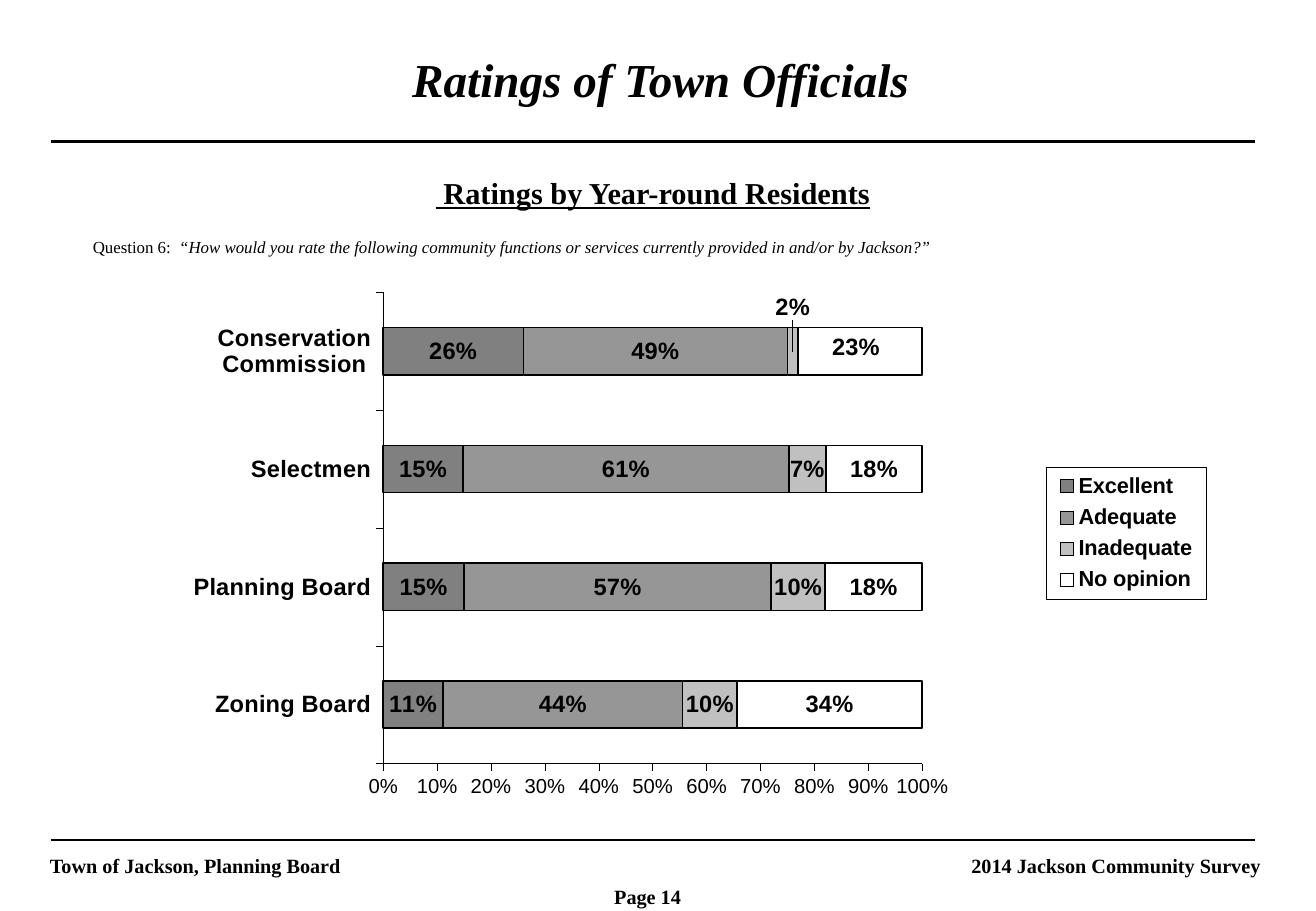
from lxml import etree
from pptx import Presentation
from pptx import util as u
from pptx.chart.data import CategoryChartData
from pptx.dml.color import RGBColor
from pptx.enum import chart as ch, shapes, text
from pptx.oxml.ns import qn

# Theme
THEME = dict(ink="000000", serif="Times New Roman", sans="Arial",
             title=28, subtitle=18, question=10, footer=12,
             label=14, axis=12, legend=12.9,
             fills=["808080", "969696", "C0C0C0", "FFFFFF"])
INK = RGBColor.from_string(THEME["ink"])

# Slide on a grid of 130 columns by 90 rows, 12 to the inch
prs = Presentation()
CELL = u.Inches(1) // 12
prs.slide_width, prs.slide_height = 130 * CELL, 90 * CELL
s = prs.slides.add_slide(prs.slide_layouts[5])


def grid(*cells):
    return [u.Emu(round(c * CELL)) for c in cells]


def style(font, size, name=THEME["serif"], **fmt):
    for key, value in dict(size=u.Pt(size), name=name, **fmt).items():
        setattr(font, key, value)
    font.color.rgb = INK


# Title, subtitle, question and footer
LEFT, CENTER, RIGHT = text.PP_ALIGN.LEFT, text.PP_ALIGN.CENTER, text.PP_ALIGN.RIGHT
bold = dict(bold=True)
texts = [
    ((5.75, 5, 119, 6.25), CENTER, THEME["title"],
     [("Ratings of Town Officials", dict(bold=True, italic=True))]),
    ((5, 17, 119, 4.4), CENTER, THEME["subtitle"],
     [(" Ratings by Year-round Residents", dict(bold=True, underline=True))]),
    ((8, 23, 109, 3), LEFT, THEME["question"],
     [("Question 6:", {}),
      ("  “How would you rate the following community functions or services "
       "currently provided in and/or by Jackson?”", dict(italic=True))]),
    ((3.75, 84, 47, 3.33), LEFT, THEME["footer"], [("Town of Jackson, Planning Board", bold)]),
    ((81.75, 84, 44, 3.33), RIGHT, THEME["footer"], [("2014 Jackson Community Survey", bold)]),
    ((59.5, 87, 11, 3.33), LEFT, THEME["footer"], [("Page 14", bold)]),
]
for i, (box, align, size, runs) in enumerate(texts):
    sp = s.shapes.title if i == 0 else s.shapes.add_textbox(*grid(*box))
    sp.left, sp.top, sp.width, sp.height = grid(*box)
    tf = sp.text_frame
    tf.word_wrap, tf.auto_size = True, text.MSO_AUTO_SIZE.NONE
    tf.vertical_anchor = text.MSO_ANCHOR.TOP
    p = tf.paragraphs[0]
    p.alignment, p.line_spacing = align, 0.9
    for words, fmt in runs:
        r = p.add_run()
        r.text = words
        style(r.font, size, **fmt)

# Rules under the title and above the footer
for row, weight in [(14, 2), (83, 1)]:
    line = s.shapes.add_connector(shapes.MSO_CONNECTOR.STRAIGHT, *grid(5, row, 124, row))
    line.line.color.rgb, line.line.width = INK, u.Pt(weight)
    etree.SubElement(line._element.spPr, qn("a:effectLst"))

# Ratings chart
data = CategoryChartData(number_format="0%")
data.categories = ["Zoning Board", "Planning Board", "Selectmen", "Conservation Commission"]
for name, values in [("Excellent", (0.11, 0.15, 0.15, 0.26)),
                     ("Adequate", (0.44, 0.57, 0.61, 0.49)),
                     ("Inadequate", (0.10, 0.10, 0.07, 0.02)),
                     ("No opinion", (0.34, 0.18, 0.18, 0.23))]:
    data.add_series(name, values)
chart = s.shapes.add_chart(ch.XL_CHART_TYPE.BAR_STACKED_100,
                           *grid(16.7, 27.25, 103.2, 54.1), data).chart
style(chart.font, 17.3, THEME["sans"], bold=True)
chart.has_title = False
plot = chart.plots[0]
plot.gap_width, plot.overlap, plot.vary_by_categories = 150, 100, False

# Axes
for axis, size, is_bold in [(chart.category_axis, THEME["label"], True),
                            (chart.value_axis, THEME["axis"], False)]:
    axis.has_major_gridlines = False
    axis.major_tick_mark, axis.minor_tick_mark = ch.XL_TICK_MARK.OUTSIDE, ch.XL_TICK_MARK.NONE
    axis.format.line.color.rgb, axis.format.line.width = INK, u.Pt(0.25)
    style(axis.tick_labels.font, size, THEME["sans"], bold=is_bold)
axis = chart.value_axis
axis.minimum_scale, axis.maximum_scale, axis.major_unit = 0, 1, 0.1
axis.tick_labels.number_format, axis.tick_labels.number_format_is_linked = "0%", False

# Legend
chart.has_legend = True
legend = chart.legend
legend.position, legend.include_in_layout = ch.XL_LEGEND_POSITION.RIGHT, False
style(legend.font, THEME["legend"], THEME["sans"], bold=True)
border = etree.fromstring(
    '<c:spPr xmlns:c="http://schemas.openxmlformats.org/drawingml/2006/chart" '
    'xmlns:a="http://schemas.openxmlformats.org/drawingml/2006/main"><a:ln w="3175">'
    f'<a:solidFill><a:srgbClr val="{THEME["ink"]}"/></a:solidFill></a:ln></c:spPr>')
legend._element.find(qn("c:txPr")).addprevious(border)

# Bars and their labels
layouts = []
nudges = {2: dict(x=0, y=-0.08), 3: dict(x=-0.004, y=-0.007)}
for i, (series, fill) in enumerate(zip(plot.series, THEME["fills"])):
    series.format.fill.solid()
    series.format.fill.fore_color.rgb = RGBColor.from_string(fill)
    series.format.line.color.rgb, series.format.line.width = INK, u.Pt(1)
    labels = series.data_labels
    labels.show_value, labels.number_format, labels.number_format_is_linked = True, "0%", False
    style(labels.font, THEME["label"], THEME["sans"], bold=True)
    if i in nudges:
        label = series.points[3].data_label
        style(label.font, THEME["label"], THEME["sans"], bold=True)
        idx = label.font and labels._element.find(qn("c:dLbl")).find(qn("c:idx"))
        fmt = etree.Element(qn("c:numFmt"), formatCode="0%", sourceLinked="0")
        idx.addnext(fmt)
        layouts.append((fmt, nudges[i]))

# Fixed places for plot, legend and the two moved labels, as shares of the chart
area = chart._chartSpace.chart.plotArea
for old in area.findall(qn("c:layout")) + legend._element.findall(qn("c:layout")):
    old.getparent().remove(old)
layouts += [
    (area[0], dict(layoutTarget="inner", xMode="edge", yMode="edge",
                   x=0.205, y=0.03, w=0.516, h=0.861)),
    (legend._element.find(qn("c:overlay")),
     dict(xMode="edge", yMode="edge", x=0.84, y=0.35, w=0.153, h=0.24)),
]
for follower, places in layouts:
    layout = etree.Element(qn("c:layout"))
    manual = etree.SubElement(layout, qn("c:manualLayout"))
    for tag, value in places.items():
        etree.SubElement(manual, qn("c:" + tag), val=str(value))
    follower.addprevious(layout)

prs.save("out.pptx")
